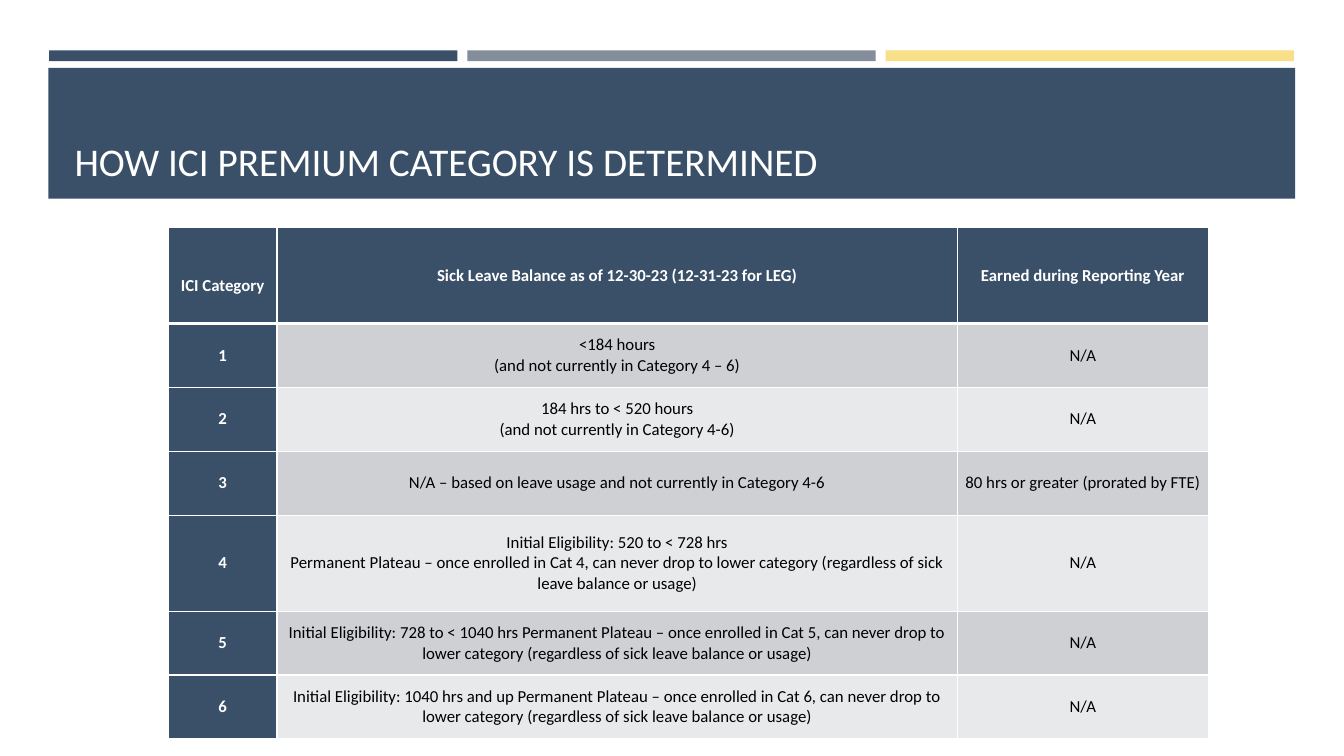
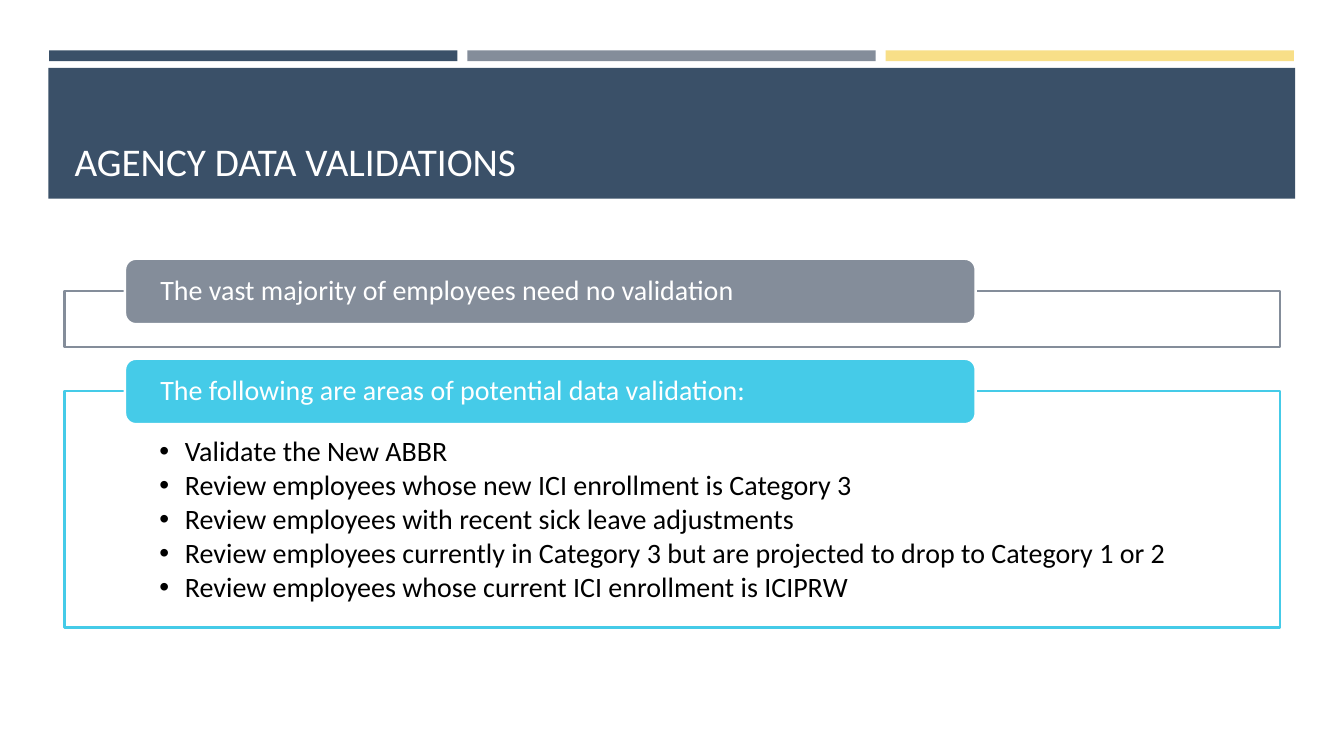
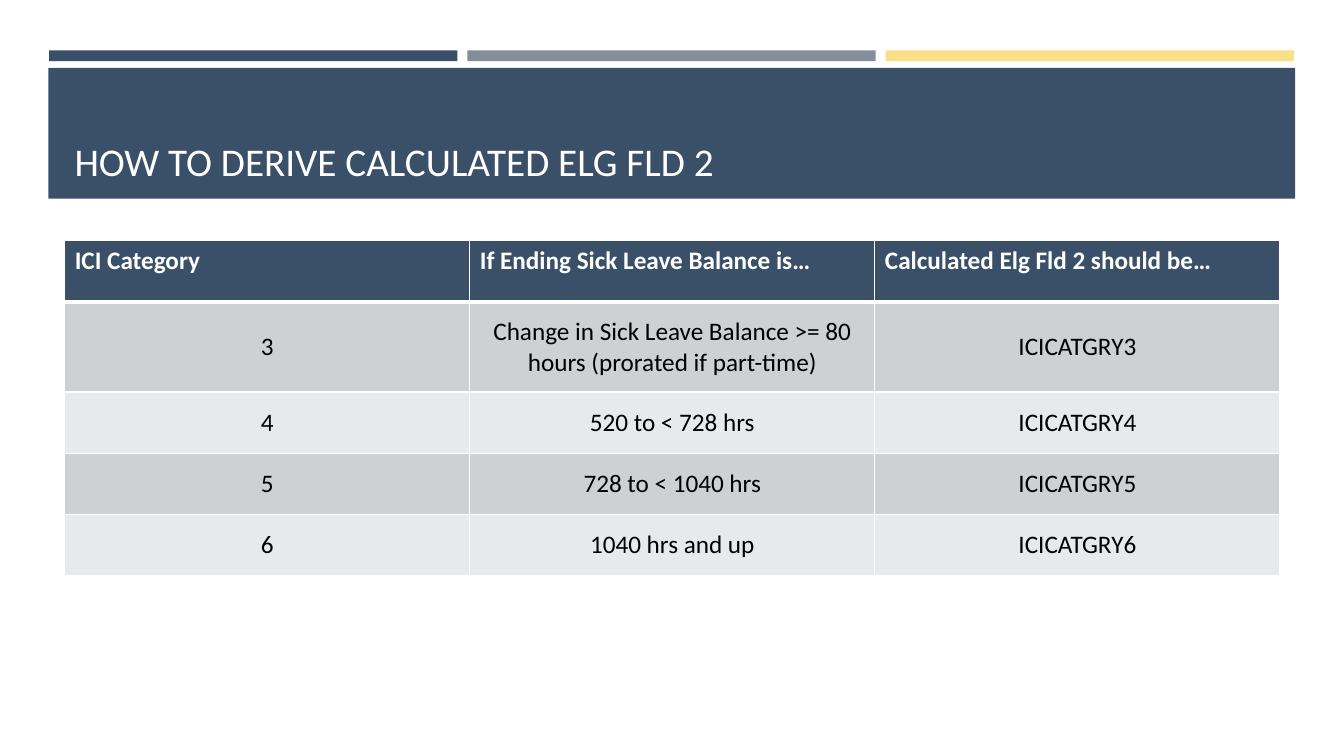
"""Build three slides on ICI premium categories and data validation."""
from lxml.etree import SubElement
from pptx import Presentation
from pptx.dml.color import RGBColor
from pptx.enum.shapes import MSO_SHAPE as Shape
from pptx.enum.text import MSO_ANCHOR as Anchor, PP_ALIGN as Align
from pptx.oxml.ns import qn
from pptx.util import Cm, Pt

COLORS = {
    "navy": "3A5068", "slate": "848D9A", "gold": "F8DF88", "cyan": "45CBE8",
    "white": "FFFFFF", "black": "000000", "band_dark": "CED0D4", "band_light": "E8E9EB",
}
FONT = "Calibri"
LEFT, WIDTH = 1.63, 30.63
STRIPES = ["navy", "slate", "gold"]
STRIPE_LEFT, STRIPE_WIDTH, STRIPE_GAP = 1.24, 10.29, 0.25

PREMIUM = {
    "title": "HOW ICI PREMIUM CATEGORY IS DETERMINED",
    "at": (4.24, 5.74), "columns": [2.74, 17.15, 6.32],
    "heights": [2.41, 1.61, 1.61, 1.61, 2.42, 1.61, 1.61],
    "size": 12, "stub": True, "header_centred": True,
    "rows": [
        ("ICI Category", "Sick Leave Balance as of 12-30-23 (12-31-23 for LEG)",
         "Earned during Reporting Year"),
        ("1", "<184 hours\n(and not currently in Category 4 – 6)", "N/A"),
        ("2", "184 hrs to < 520 hours\n(and not currently in Category 4-6)", "N/A"),
        ("3", "N/A – based on leave usage and not currently in Category 4-6",
         "80 hrs or greater (prorated by FTE)"),
        ("4", "Initial Eligibility: 520 to < 728 hrs\nPermanent Plateau – once enrolled in Cat 4, "
         "can never drop to lower category (regardless of sick leave balance or usage)", "N/A"),
        ("5", "Initial Eligibility: 728 to < 1040 hrs Permanent Plateau – once enrolled in Cat 5, "
         "can never drop to lower category (regardless of sick leave balance or usage)", "N/A"),
        ("6", "Initial Eligibility: 1040 hrs and up Permanent Plateau – once enrolled in Cat 6, "
         "can never drop to lower category (regardless of sick leave balance or usage)", "N/A"),
    ],
}
VALIDATION_TITLE = "AGENCY DATA VALIDATIONS"
VALIDATIONS = [
    ("The vast majority of employees need no validation", "slate", 1.4, []),
    ("The following are areas of potential data validation:", "cyan", 5.95, [
        "Validate the New ABBR",
        "Review employees whose new ICI enrollment is Category 3",
        "Review employees with recent sick leave adjustments",
        "Review employees currently in Category 3 but are projected to drop to Category 1 or 2",
        "Review employees whose current ICI enrollment is ICIPRW",
    ]),
]
DERIVATION = {
    "title": "HOW TO DERIVE CALCULATED ELG FLD 2",
    "at": (LEFT, 6.07), "columns": [WIDTH / 3] * 3,
    "heights": [1.54, 2.27, 1.54, 1.54, 1.54],
    "size": 18, "stub": False, "header_centred": False,
    "rows": [
        ("ICI Category", "If Ending Sick Leave Balance is…", "Calculated Elg Fld 2 should be…"),
        ("3", "Change in Sick Leave Balance >= 80 hours (prorated if part-time)", "ICICATGRY3"),
        ("4", "520 to < 728 hrs", "ICICATGRY4"),
        ("5", "728 to < 1040 hrs", "ICICATGRY5"),
        ("6", "1040 hrs and up", "ICICATGRY6"),
    ],
}


def rgb(name):
    return RGBColor.from_string(COLORS[name])


def style(paragraph, size, color, bold=False, align=Align.LEFT):
    paragraph.alignment = align
    font = paragraph.font
    font.name, font.size, font.bold = FONT, Pt(size), bold
    font.color.rgb = rgb(color)


def set_margins(holder, side, top=0.0, bottom=0.0):
    holder.margin_left = holder.margin_right = Cm(side)
    holder.margin_top, holder.margin_bottom = Cm(top), Cm(bottom)


def add_block(slide, kind, box, fill, line=None):
    block = slide.shapes.add_shape(kind, *map(Cm, box))
    block.shadow.inherit = False
    block.fill.solid()
    block.fill.fore_color.rgb = rgb(fill)
    if line:
        block.line.color.rgb = rgb(line)
        block.line.width = Pt(1.75)
    else:
        block.line.fill.background()
    return block


def add_slide(deck, title):
    slide = deck.slides.add_slide(deck.slide_layouts[6])
    for i, color in enumerate(STRIPES):
        left = STRIPE_LEFT + i * (STRIPE_WIDTH + STRIPE_GAP)
        add_block(slide, Shape.RECTANGLE, (left, 1.27, STRIPE_WIDTH, 0.27), color)
    add_block(slide, Shape.RECTANGLE, (1.22, 1.71, 31.42, 3.3), "navy")
    heading = slide.shapes.add_textbox(Cm(LEFT), Cm(1.96), Cm(WIDTH), Cm(2.82)).text_frame
    heading.word_wrap = True
    heading.vertical_anchor = Anchor.BOTTOM
    heading.text = title
    style(heading.paragraphs[0], 28, "white")
    return slide


def add_borders(cell, row):
    weights = {"L": 1, "R": 1, "T": 3 if row == 1 else 1, "B": 3 if row == 0 else 1}
    for side, weight in weights.items():
        border = SubElement(cell._tc.get_or_add_tcPr(), qn(f"a:ln{side}"), w=str(Pt(weight)))
        SubElement(SubElement(border, qn("a:solidFill")), qn("a:srgbClr"), val=COLORS["white"])


def add_grid(deck, content):
    slide = add_slide(deck, content["title"])
    rows, columns, heights = content["rows"], content["columns"], content["heights"]
    box = (*content["at"], sum(columns), sum(heights))
    grid = slide.shapes.add_table(len(rows), len(columns), *map(Cm, box)).table
    grid.first_row = grid.horz_banding = False
    for column, width in zip(grid.columns, columns):
        column.width = Cm(width)
    for r, (row, height) in enumerate(zip(rows, heights)):
        grid.rows[r].height = Cm(height)
        for c, words in enumerate(row):
            cell = grid.cell(r, c)
            strong = r == 0 or (content["stub"] and c == 0)
            centred = r > 0 or content["header_centred"]
            cell.text = words
            add_borders(cell, r)
            cell.fill.solid()
            band = "band_dark" if r % 2 else "band_light"
            cell.fill.fore_color.rgb = rgb("navy" if strong else band)
            if centred:
                cell.vertical_anchor = Anchor.MIDDLE
                lowered = content["stub"] and r == c == 0
                set_margins(cell, 0.18, top=0.52 if lowered else 0)
            for paragraph in cell.text_frame.paragraphs:
                style(paragraph, content["size"], "white" if strong else "black", strong,
                      Align.CENTER if centred else Align.LEFT)


def add_bullet(paragraph):
    properties = paragraph._p.get_or_add_pPr()
    properties.set("marL", str(Cm(0.64)))
    properties.set("indent", str(-Cm(0.64)))
    SubElement(properties, qn("a:buFont"), typeface="Arial")
    SubElement(properties, qn("a:buChar"), char="•")


def add_validations(deck):
    slide = add_slide(deck, VALIDATION_TITLE)
    top = 7.34
    for label, color, height, checks in VALIDATIONS:
        frame = add_block(slide, Shape.RECTANGLE, (LEFT, top, WIDTH, height), "white", color)
        if checks:
            listing = frame.text_frame
            listing.word_wrap = True
            listing.vertical_anchor = Anchor.TOP
            set_margins(listing, 2.39, 1.17, 0.41)
            listing.text = "\n".join(checks)
            for paragraph in listing.paragraphs:
                add_bullet(paragraph)
                paragraph.line_spacing = 0.9
                paragraph.space_after = Pt(2.7)
                style(paragraph, 20, "black")
        tab = add_block(slide, Shape.ROUNDED_RECTANGLE, (3.15, top - 0.82, 21.44, 1.65),
                        color, "white").text_frame
        tab.word_wrap = True
        tab.vertical_anchor = Anchor.MIDDLE
        set_margins(tab, 0.81)
        tab.text = label
        tab.paragraphs[0].line_spacing = 0.9
        style(tab.paragraphs[0], 20, "white")
        top += height + 1.12


def main():
    deck = Presentation()
    deck.slide_width, deck.slide_height = Cm(33.87), Cm(19.05)
    add_grid(deck, PREMIUM)
    add_validations(deck)
    add_grid(deck, DERIVATION)
    deck.save("out.pptx")


if __name__ == "__main__":
    main()
